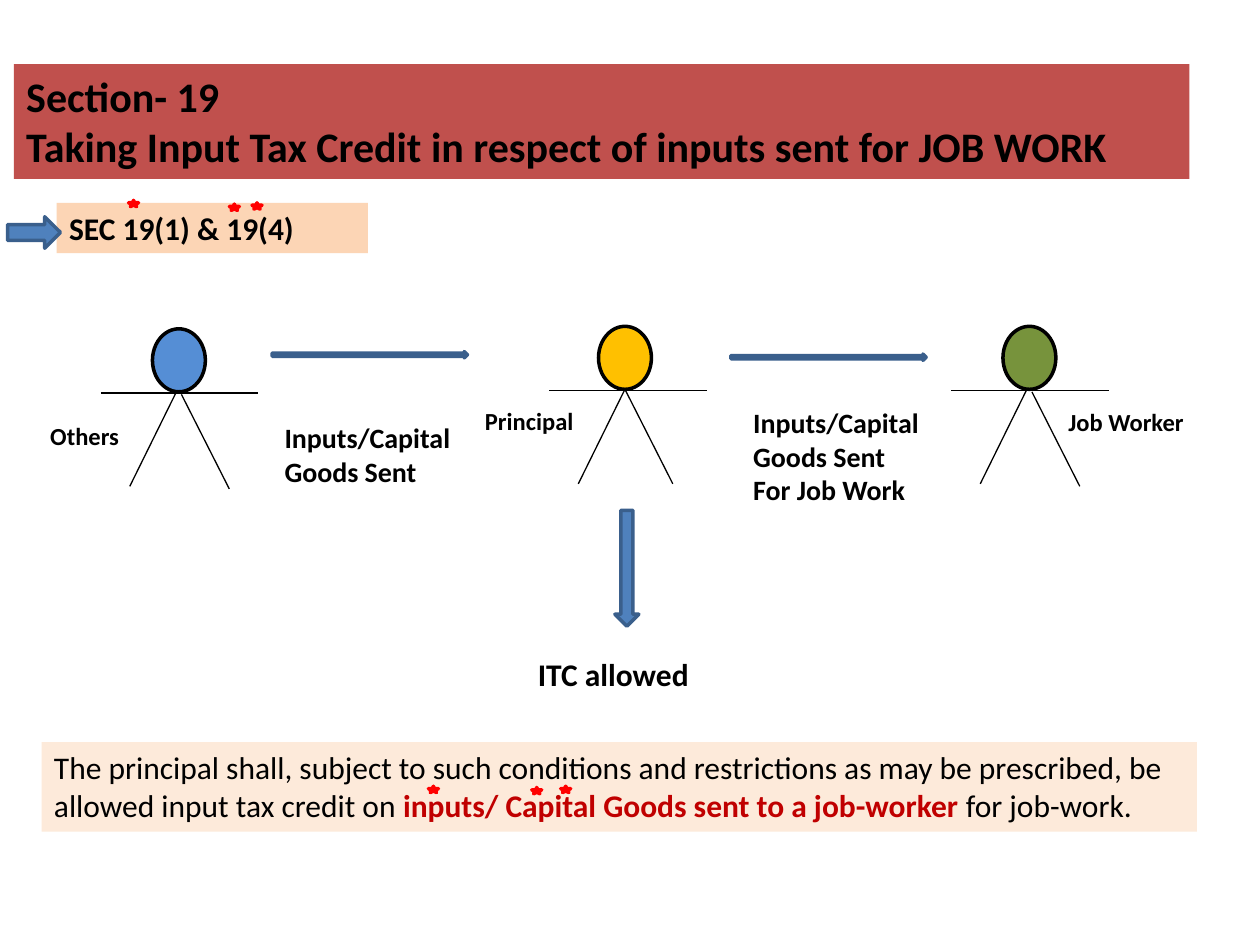
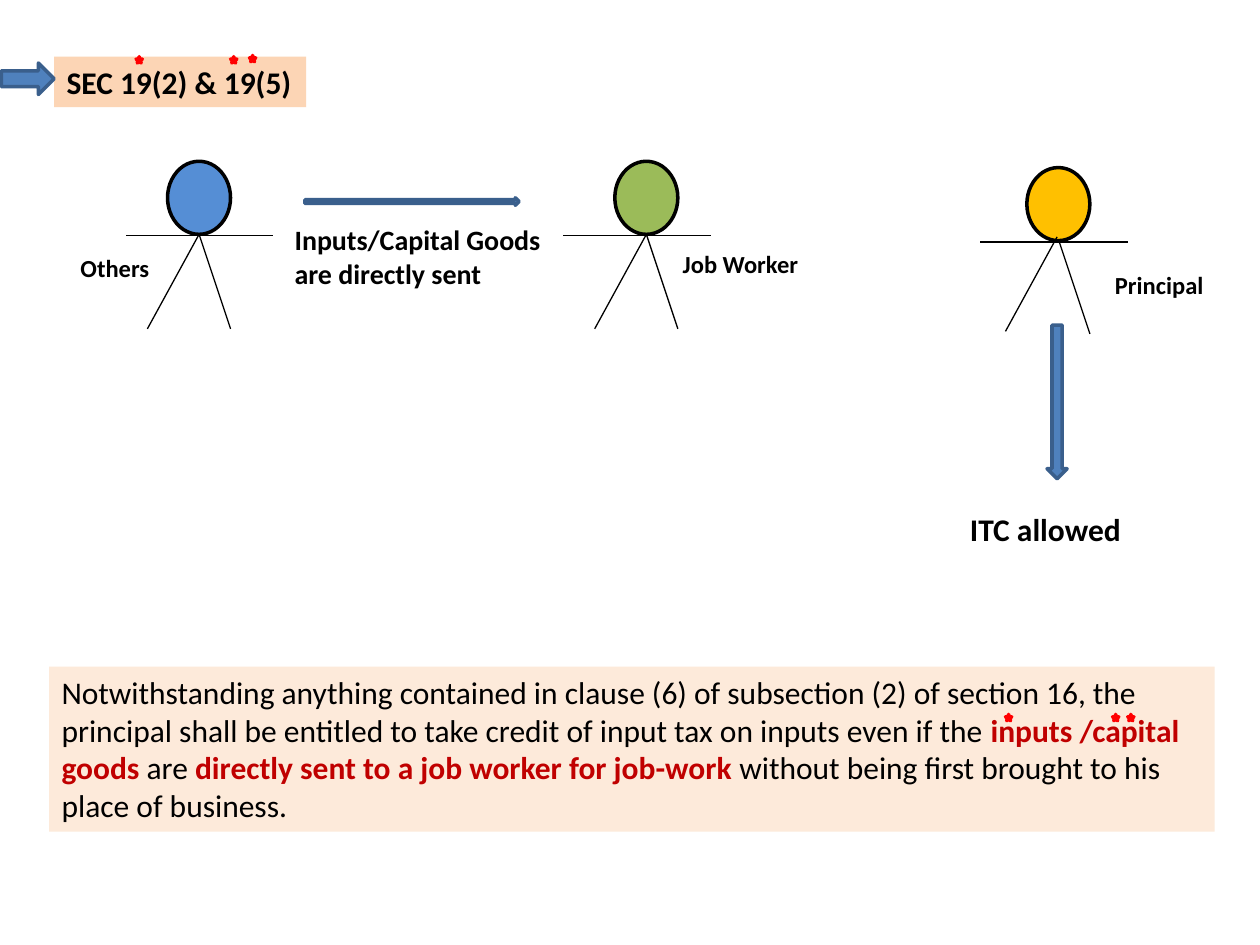
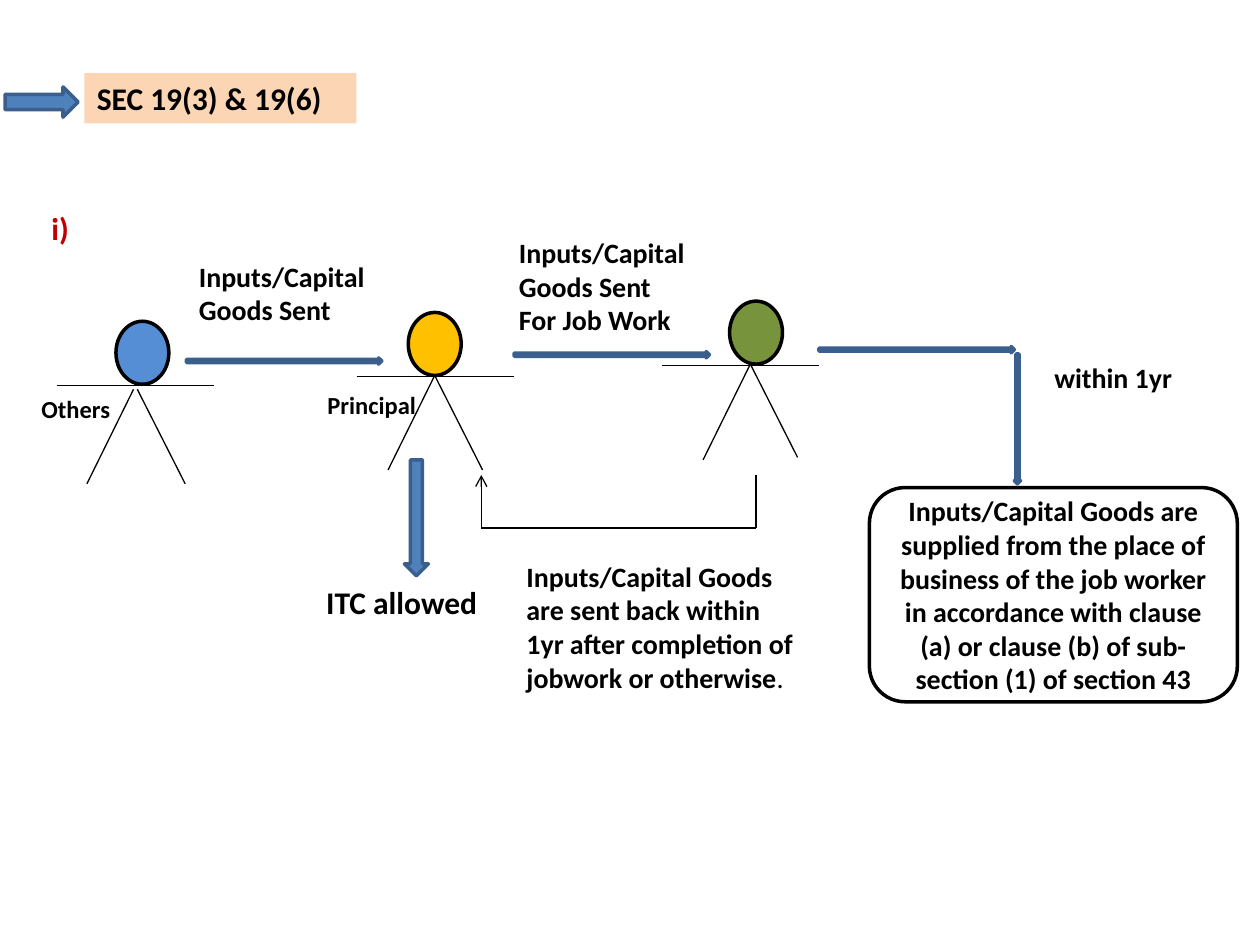
from dataclasses import dataclass

from lxml.etree import SubElement
from pptx import Presentation
from pptx.dml.color import RGBColor
from pptx.enum.shapes import MSO_CONNECTOR, MSO_SHAPE
from pptx.enum.text import MSO_ANCHOR, PP_ALIGN
from pptx.oxml.ns import qn
from pptx.util import Inches, Pt

FONT = "Calibri"
BLACK, RED, STAR_RED = "000000", "C00000", "FF0000"
TITLE_BAND, SECTION_BAND, RULE_BAND = "C0504D", "FCD5B5", "FDEADA"
ARROW_FILL, ARROW_EDGE = "4F81BD", "3A5F8C"
OTHERS, PRINCIPAL, JOB_WORKER, LIGHT_WORKER = "558ED5", "FFC000", "77933C", "9BBB59"

INPUTS_SENT = ["Inputs/Capital Goods Sent"]
SENT_FOR_JOB_WORK = INPUTS_SENT + ["For Job Work"]
KEY = {"color": RED, "bold": True}


@dataclass
class Build:
    """Proportions of a stick figure, in inches."""
    head_width: float
    head_height: float
    arm_span: float
    left_stride: float
    right_stride: float


SLIM = Build(0.42, 0.5, 1.25, 0.37, 0.38)
BROAD = Build(0.5, 0.58, 1.17, 0.41, 0.25)
LEG_DROP = 0.75


def rgb(hex_color):
    return RGBColor.from_string(hex_color)


def write(frame, paragraphs, size=16, bold=True, color=BLACK, align=PP_ALIGN.LEFT,
          anchor=MSO_ANCHOR.TOP, wrap=True):
    """Each paragraph is a string or a list of (text, format changes)."""
    frame.word_wrap = wrap
    frame.vertical_anchor = anchor
    for index, content in enumerate(paragraphs):
        paragraph = frame.paragraphs[0] if index == 0 else frame.add_paragraph()
        paragraph.alignment = align
        runs = [(content, {})] if isinstance(content, str) else content
        for text, changes in runs:
            run = paragraph.add_run()
            run.text = text
            run.font.name = FONT
            run.font.size = Pt(size)
            run.font.bold = changes.get("bold", bold)
            run.font.color.rgb = rgb(changes.get("color", color))


def label(slide, box, paragraphs, **text_format):
    textbox = slide.shapes.add_textbox(*map(Inches, box))
    write(textbox.text_frame, paragraphs, **text_format)


def draw(slide, kind, box, fill=None, edge=None):
    shape = slide.shapes.add_shape(kind, *map(Inches, box))
    shape.shadow.inherit = False
    if fill:
        shape.fill.solid()
        shape.fill.fore_color.rgb = rgb(fill)
    else:
        shape.fill.background()
    if edge:
        shape.line.color.rgb = rgb(edge)
        shape.line.width = Pt(2)
    else:
        shape.line.fill.background()
    return shape


def band(slide, box, fill, paragraphs, **text_format):
    shape = draw(slide, MSO_SHAPE.RECTANGLE, box, fill)
    write(shape.text_frame, paragraphs, **text_format)


def thin_line(slide, start, end, arrow=False):
    connector = slide.shapes.add_connector(
        MSO_CONNECTOR.STRAIGHT, *map(Inches, (*start, *end)))
    connector.line.color.rgb = rgb(BLACK)
    connector.line.width = Pt(0.75)
    if arrow:
        SubElement(connector.line._get_or_add_ln(), qn("a:tailEnd"), type="arrow")
    SubElement(connector._element.spPr, qn("a:effectLst"))


def arrow_right(slide, left, top, width=1.55, height=0.05):
    draw(slide, MSO_SHAPE.RIGHT_ARROW, (left, top, width, height), ARROW_FILL, ARROW_EDGE)


def arrow_down(slide, left, top, width=0.19, height=0.92):
    draw(slide, MSO_SHAPE.DOWN_ARROW, (left, top, width, height), ARROW_FILL, ARROW_EDGE)


def stars(slide, places, width=0.08, fill=STAR_RED):
    for left, top in places:
        draw(slide, MSO_SHAPE.STAR_5_POINT, (left, top, width, 0.05), fill, STAR_RED)


def section_heading(slide, text, box, pointer):
    band(slide, box, SECTION_BAND, [text], size=18)
    arrow_right(slide, *pointer)


def person(slide, left, top, fill, build=SLIM, arm_offset=-0.41, hips=None):
    """Stick figure placed by its head; hips are the leg tops relative to the head."""
    centre = (build.head_width / 2, build.head_height)
    hips = hips or (centre, centre)
    draw(slide, MSO_SHAPE.OVAL, (left, top, build.head_width, build.head_height),
         fill, BLACK)
    arm_left, arm_y = left + arm_offset, top + build.head_height + 0.01
    thin_line(slide, (arm_left, arm_y), (arm_left + build.arm_span, arm_y))
    for (dx, dy), stride in zip(hips, (-build.left_stride, build.right_stride)):
        x, y = left + dx, top + dy
        thin_line(slide, (x, y), (x + stride, y + LEG_DROP))


def inputs_to_job_worker(slide):
    band(slide, (0.11, 0.51, 9.33, 0.91), TITLE_BAND,
         ["Section- 19", "Taking Input Tax Credit in respect of inputs sent for JOB WORK"],
         size=24)
    section_heading(slide, "SEC 19(1) & 19(4)", (0.45, 1.61, 2.47, 0.4),
                    (0.06, 1.72, 0.42, 0.25))
    band(slide, (0.33, 5.89, 9.17, 0.71), RULE_BAND, [[
        ("The principal shall, subject to such conditions and restrictions as may be "
         "prescribed, be allowed input tax credit on ", {}),
        ("inputs/ Capital Goods sent to a job-worker", KEY),
        (" for job-work.", {})]], size=18, bold=False)
    stars(slide, [(1.02, 1.59), (1.82, 1.62), (2, 1.61),
                  (3.4, 6.24), (4.22, 6.25), (4.45, 6.24)])

    uneven_hips = ((0.19, 0.5), (0.23, 0.52))
    person(slide, 1.21, 2.61, OTHERS, hips=uneven_hips)
    person(slide, 4.75, 2.59, PRINCIPAL, arm_offset=-0.39)
    person(slide, 7.96, 2.59, JOB_WORKER, hips=uneven_hips)
    label(slide, (0.3, 3.29, 0.75, 0.34), ["Others"], size=14)
    label(slide, (3.75, 3.17, 0.98, 0.34), ["Principal"], size=14)
    label(slide, (8.38, 3.18, 1.25, 0.34), ["Job Worker"], size=14)

    arrow_right(slide, 2.16, 2.79)
    label(slide, (2.16, 3.29, 1.59, 0.64), INPUTS_SENT)
    arrow_right(slide, 5.8, 2.81)
    label(slide, (5.88, 3.17, 1.67, 0.91), SENT_FOR_JOB_WORK)
    arrow_down(slide, 4.88, 4.05)
    label(slide, (4.17, 5.15, 1.75, 0.4), ["ITC allowed"], size=18)


def inputs_sent_directly(slide):
    section_heading(slide, "SEC 19(2) & 19(5)", (0.43, 0.45, 2, 0.4),
                    (0.01, 0.5, 0.42, 0.25))
    band(slide, (0.39, 5.29, 9.25, 1.31), RULE_BAND, [[
        ("Notwithstanding anything contained in clause (6) of subsection (2) of section 16, "
         "the principal shall be entitled to take credit of input tax on inputs even if the ",
         {}),
        ("inputs /capital goods", KEY),
        (" are ", {}),
        ("directly sent to a job worker for job-work ", KEY),
        ("without being first brought to his place of business.", {})]],
        size=18, bold=False)
    stars(slide, [(1.08, 0.45), (7.98, 5.67)], width=0.05)
    stars(slide, [(1.83, 0.45), (1.98, 0.44), (8.83, 5.67), (8.95, 5.67)],
          width=0.05, fill=ARROW_FILL)

    person(slide, 1.33, 1.28, OTHERS, BROAD, -0.33)
    person(slide, 4.88, 1.28, LIGHT_WORKER, BROAD, -0.41)
    person(slide, 8.15, 1.33, PRINCIPAL, BROAD, -0.37, ((0.24, 0.55), (0.25, 0.57)))
    label(slide, (0.54, 1.96, 0.75, 0.34), ["Others"], size=14, wrap=False)
    label(slide, (5.32, 1.93, 1.13, 0.34), ["Job Worker"], size=14)
    label(slide, (8.75, 2.09, 0.91, 0.34), ["Principal"], size=14, wrap=False)

    arrow_right(slide, 2.42, 1.57, 1.7, 0.06)
    label(slide, (2.24, 1.72, 2.17, 0.64), ["Inputs/Capital Goods", "are directly sent"])
    arrow_down(slide, 8.31, 2.58, 0.16, 1.22)
    label(slide, (7.6, 4, 1.53, 0.4), ["ITC allowed"], size=18)


def return_path(slide, left, right, top, bottom):
    """Line from the job worker down, across and up to the principal."""
    corners = [(right, top), (right, bottom), (left, bottom), (left, top)]
    for start, end in zip(corners, corners[1:]):
        thin_line(slide, start, end, arrow=end == corners[-1])


def goods_returned_or_supplied(slide):
    section_heading(slide, "SEC 19(3) & 19(6)", (0.67, 0.58, 2.16, 0.4),
                    (0.04, 0.69, 0.58, 0.24))
    label(slide, (0.31, 1.61, 0.35, 0.4), ["i)"], size=18, color=RED)

    person(slide, 0.92, 2.55, OTHERS, arm_offset=-0.47, hips=((0.14, 0.54), (0.17, 0.54)))
    person(slide, 3.24, 2.48, PRINCIPAL)
    person(slide, 5.79, 2.39, JOB_WORKER, arm_offset=-0.54,
           hips=((0.16, 0.51), (0.16, 0.49)))
    label(slide, (0.23, 3.08, 0.75, 0.34), ["Others"], size=14)
    label(slide, (2.5, 3.05, 0.98, 0.34), ["Principal"], size=14)

    arrow_right(slide, 1.48, 2.84)
    label(slide, (1.48, 2.01, 1.59, 0.64), INPUTS_SENT)
    arrow_right(slide, 4.08, 2.79)
    label(slide, (4.02, 1.82, 1.67, 0.91), SENT_FOR_JOB_WORK)
    arrow_down(slide, 3.21, 3.65)
    label(slide, (2.49, 4.58, 1.51, 0.4), ["ITC allowed"], size=18)

    return_path(slide, 3.82, 6, 3.77, 4.19)
    label(slide, (4.08, 4.39, 2.36, 1.18), [[
        ("Inputs/Capital Goods are sent back within 1yr after completion of jobwork "
         "or otherwise", {}),
        (".", {"bold": False})]])

    arrow_right(slide, 6.5, 2.75)
    arrow_down(slide, 8.05, 2.81, 0.05, 1.03)
    label(slide, (8.27, 2.81, 1.2, 0.37), ["within 1yr"], wrap=False)
    supply = draw(slide, MSO_SHAPE.ROUNDED_RECTANGLE, (6.9, 3.87, 2.92, 1.7), edge=BLACK)
    write(supply.text_frame, [
        "Inputs/Capital Goods are supplied from the place of business of the job worker "
        "in accordance with clause (a) or clause (b) of sub-section (1) of section 43"],
        align=PP_ALIGN.CENTER, anchor=MSO_ANCHOR.MIDDLE)


def main():
    deck = Presentation()
    deck.slide_width, deck.slide_height = Inches(10), Inches(7.5)
    blank = deck.slide_layouts[6]
    for build_slide in (inputs_to_job_worker, inputs_sent_directly,
                        goods_returned_or_supplied):
        build_slide(deck.slides.add_slide(blank))
    deck.save("out.pptx")


if __name__ == "__main__":
    main()
